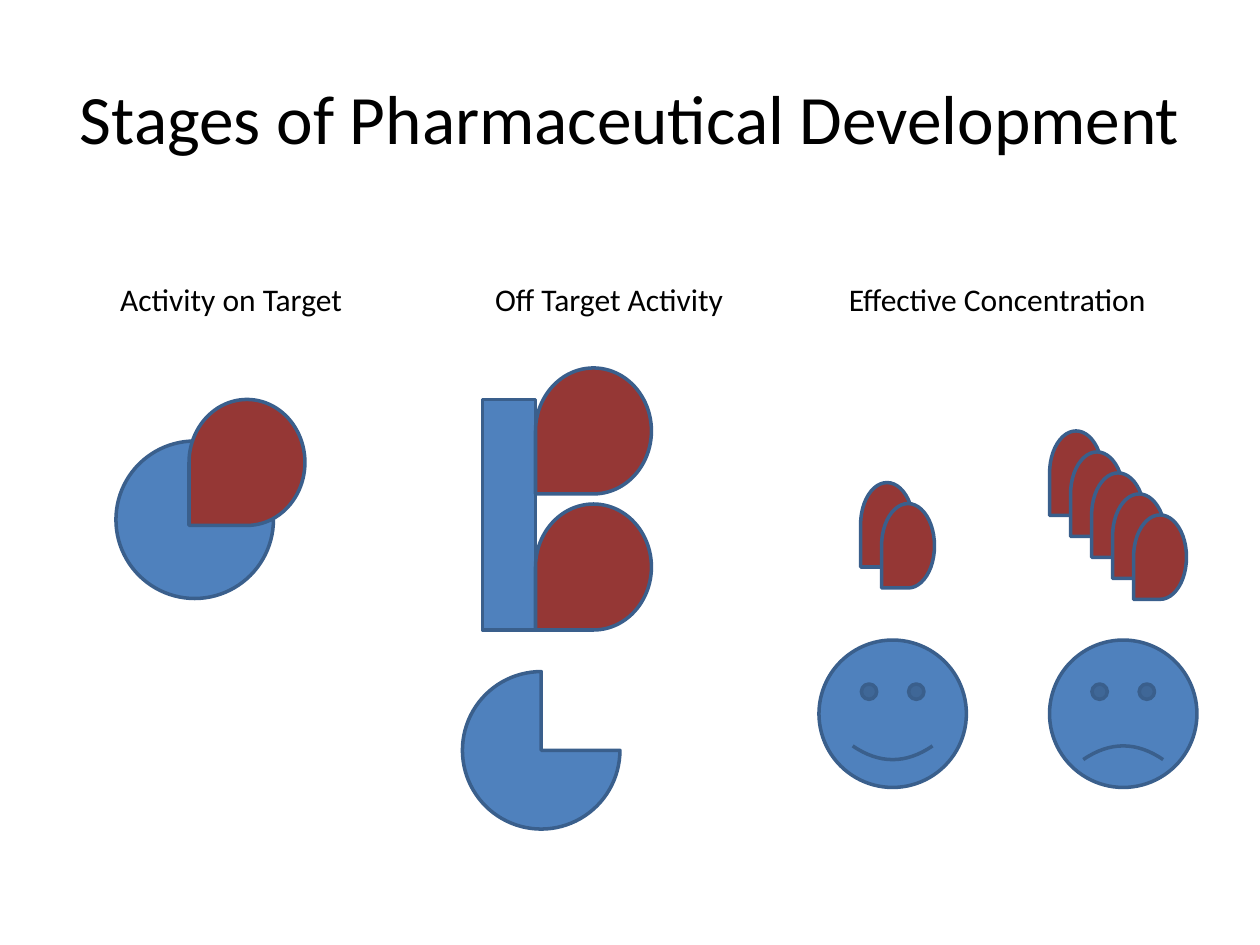
from pptx import Presentation
from pptx.dml.color import RGBColor
from pptx.enum.shapes import MSO_SHAPE
from pptx.enum.text import MSO_ANCHOR, PP_ALIGN
from pptx.util import Inches, Pt

COLORS = {"text": "000000", "target": "4F81BD", "drug": "953735", "line": "3A5F8C"}

prs = Presentation()
prs.slide_width, prs.slide_height = Inches(10), Inches(7.5)
s = prs.slides.add_slide(prs.slide_layouts[5])


def add_text(sp, text, size):
    tf = sp.text_frame
    tf.word_wrap = True
    tf.text = text
    p = tf.paragraphs[0]
    p.alignment = PP_ALIGN.CENTER
    font = p.runs[0].font
    font.name, font.size = "Calibri", Pt(size)
    font.color.rgb = RGBColor.from_string(COLORS["text"])


def add_figure(kind, left, top, width, height, color="target"):
    sp = s.shapes.add_shape(kind, Inches(left), Inches(top), Inches(width), Inches(height))
    sp.shadow.inherit = False
    sp.fill.solid()
    sp.fill.fore_color.rgb = RGBColor.from_string(COLORS[color])
    sp.line.color.rgb = RGBColor.from_string(COLORS["line"])
    sp.line.width = Pt(2)
    if kind == MSO_SHAPE.TEAR:
        sp.rotation = 180
    return sp


# Title
title = s.shapes.title
title.left, title.top = Inches(0.5), Inches(0.3)
title.width, title.height = Inches(9), Inches(1.25)
add_text(title, "Stages of Pharmaceutical Development", 39.6)
title.text_frame.vertical_anchor = MSO_ANCHOR.MIDDLE

# Column headings
for text, left, width in [
    ("Activity on Target", 0.5, 2.67),
    ("Off Target Activity", 3.25, 3.17),
    ("Effective Concentration", 6.5, 2.83),
]:
    box = s.shapes.add_textbox(Inches(left), Inches(2.17), Inches(width), Inches(0.4))
    add_text(box, text, 18)

# Activity on target: the drug fits the notch
add_figure(MSO_SHAPE.PIE, 0.92, 3.5, 1.25, 1.25)
add_figure(MSO_SHAPE.TEAR, 1.5, 3.17, 0.92, 1, "drug")

# Off target activity: the drug binds elsewhere
add_figure(MSO_SHAPE.PIE, 3.67, 5.33, 1.25, 1.25)
add_figure(MSO_SHAPE.RECTANGLE, 3.83, 3.17, 0.42, 1.83)
for top in (2.92, 4):
    add_figure(MSO_SHAPE.TEAR, 4.25, top, 0.92, 1, "drug")

# Effective concentration: diagonal stacks of doses
STEP = 1 / 6
for left, top, count in [(8.33, 3.42, 5), (6.83, 3.83, 2)]:
    for i in range(count):
        add_figure(MSO_SHAPE.TEAR, left + i * STEP, top + i * STEP, 0.42, 0.67, "drug")

# Happy and sad patients
add_figure(MSO_SHAPE.SMILEY_FACE, 6.5, 5.08, 1.17, 1.17)
sad = add_figure(MSO_SHAPE.SMILEY_FACE, 8.33, 5.08, 1.17, 1.17)
sad.adjustments[0] = -0.047

prs.save("out.pptx")
